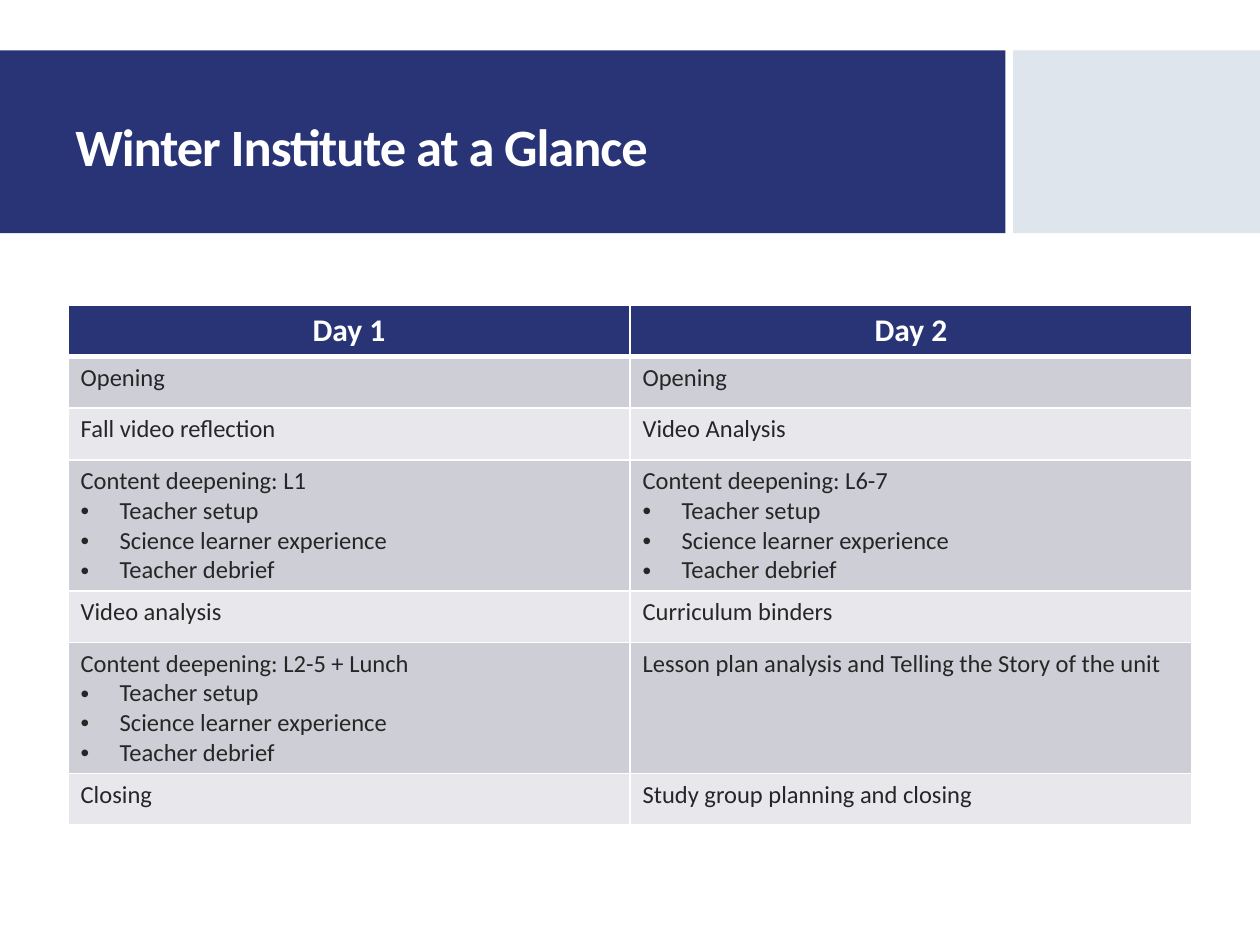
"""Build the two-day Winter Institute schedule slide."""
import lxml.etree
import pptx
import pptx.dml.color
import pptx.enum.shapes
import pptx.enum.text
import pptx.oxml.ns
import pptx.util

COLORS = {
    "navy": "293476",
    "mist": "DFE5ED",
    "white": "FFFFFF",
    "ink": "262626",
    "dark_band": "CDCED6",
    "light_band": "E8E8EC",
}
ACTIVITIES = ["Teacher setup", "Science learner experience", "Teacher debrief"]
SCHEDULE = [
    (["Day 1"], ["Day 2"]),
    (["Opening"], ["Opening"]),
    (["Fall video reflection"], ["Video Analysis"]),
    (["Content deepening: L1", *ACTIVITIES], ["Content deepening: L6-7", *ACTIVITIES]),
    (["Video analysis"], ["Curriculum binders"]),
    (["Content deepening: L2-5 + Lunch", *ACTIVITIES],
     ["Lesson plan analysis and Telling the Story of the unit"]),
    (["Closing"], ["Study group planning and closing"]),
]
Inches = pptx.util.Inches
qn = pptx.oxml.ns.qn


def rgb(name):
    return pptx.dml.color.RGBColor.from_string(COLORS[name])


def write_text(frame, lines, size, color, bold=False, align=None, spacing=None, tracking=None):
    for index, line in enumerate(lines):
        paragraph = frame.paragraphs[0] if index == 0 else frame.add_paragraph()
        if index > 0:
            properties = paragraph._p.get_or_add_pPr()
            properties.set("marL", str(Inches(0.31)))
            properties.set("indent", str(-Inches(0.31)))
            lxml.etree.SubElement(properties, qn("a:buFont"), typeface="Arial")
            lxml.etree.SubElement(properties, qn("a:buChar"), char="•")
        paragraph.alignment = align
        paragraph.line_spacing = spacing
        run = paragraph.add_run()
        run.text = line
        run.font.name = "Calibri"
        run.font.size = pptx.util.Pt(size)
        run.font.bold = bold
        run.font.color.rgb = rgb(color)
        if tracking is not None:
            run._r.get_or_add_rPr().set("spc", str(tracking))


presentation = pptx.Presentation()
presentation.slide_width = Inches(10)
presentation.slide_height = Inches(7.5)
slide = presentation.slides.add_slide(presentation.slide_layouts[6])

for left, width, color in [(0, 7.98, "navy"), (8.04, 1.96, "mist")]:
    banner = slide.shapes.add_shape(
        pptx.enum.shapes.MSO_SHAPE.RECTANGLE,
        Inches(left), Inches(0.4), Inches(width), Inches(1.45))
    banner.shadow.inherit = False
    banner.fill.solid()
    banner.fill.fore_color.rgb = rgb(color)
    banner.line.fill.background()

title = slide.shapes.add_textbox(Inches(0.5), Inches(0.58), Inches(6.93), Inches(1.22))
title.text_frame.word_wrap = True
title.text_frame.vertical_anchor = pptx.enum.text.MSO_ANCHOR.MIDDLE
write_text(title.text_frame, ["Winter Institute at a Glance"], 30, "white",
           bold=True, spacing=0.9, tracking=-60)

row_heights = [1.04 if len(cells[0]) > 1 else 0.41 for cells in SCHEDULE]
table = slide.shapes.add_table(
    len(SCHEDULE), 2, Inches(0.54), Inches(2.42),
    Inches(8.92), Inches(sum(row_heights))).table
for column in table.columns:
    column.width = Inches(4.46)

for row_index, cells in enumerate(SCHEDULE):
    table.rows[row_index].height = Inches(row_heights[row_index])
    header = row_index == 0
    band = "navy" if header else "dark_band" if row_index % 2 else "light_band"
    for column_index, lines in enumerate(cells):
        cell = table.cell(row_index, column_index)
        properties = cell._tc.get_or_add_tcPr()
        for side in ("L", "R", "T", "B"):
            heavy = (header and side == "B") or (row_index == 1 and side == "T")
            border = lxml.etree.SubElement(
                properties, qn(f"a:ln{side}"), w=str(pptx.util.Pt(3 if heavy else 1)))
            fill = lxml.etree.SubElement(border, qn("a:solidFill"))
            lxml.etree.SubElement(fill, qn("a:srgbClr"), val=COLORS["white"])
        cell.fill.solid()
        cell.fill.fore_color.rgb = rgb(band)
        if header:
            write_text(cell.text_frame, lines, 18, "white", bold=True,
                       align=pptx.enum.text.PP_ALIGN.CENTER)
        else:
            write_text(cell.text_frame, lines, 14, "ink")

presentation.save("out.pptx")
